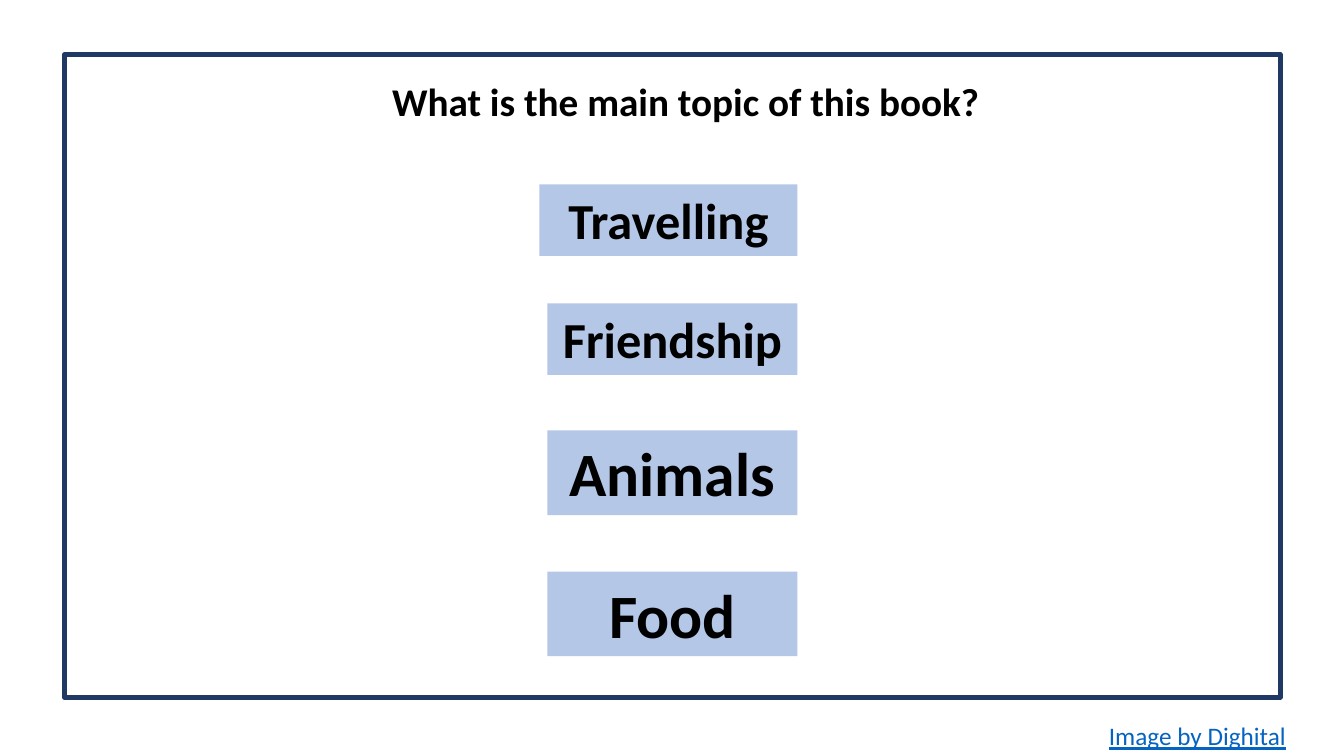
from pptx import Presentation
from pptx.dml.color import RGBColor
from pptx.enum.shapes import MSO_SHAPE
from pptx.enum.text import MSO_ANCHOR, PP_ALIGN
from pptx.util import Inches, Pt

NAVY, PALE_BLUE, LINK_BLUE = "203864", "B4C7E7", "0563C1"
BLACK, WHITE = "000000", "FFFFFF"

# Answer, left, top, width, height, text size
ANSWERS = [
    ("Travelling", 5.35, 1.83, 2.56, 0.71, 36),
    ("Friendship", 5.43, 3.01, 2.48, 0.71, 36),
    ("Animals", 5.43, 4.27, 2.48, 0.84, 44),
    ("Food", 5.43, 5.67, 2.48, 0.84, 44),
]


def color(value):
    return RGBColor.from_string(value)


def write_text(shape, text, text_color=BLACK, wrap=True,
               alignment=PP_ALIGN.CENTER, **font_format):
    shape.text_frame.word_wrap = wrap
    paragraph = shape.text_frame.paragraphs[0]
    paragraph.text = text
    paragraph.alignment = alignment
    font = paragraph.runs[0].font
    font.color.rgb = color(text_color)
    for name, value in {"name": "Calibri", **font_format}.items():
        setattr(font, name, value)
    return paragraph


def add_rectangle(slide, box, fill, line=None, line_width=0):
    shape = slide.shapes.add_shape(MSO_SHAPE.RECTANGLE, *map(Inches, box))
    shape.shadow.inherit = False
    shape.fill.solid()
    shape.fill.fore_color.rgb = color(fill)
    if line:
        shape.line.color.rgb = color(line)
        shape.line.width = Pt(line_width)
    else:
        shape.line.fill.background()
    return shape


def add_text(slide, box, text, **text_format):
    text_box = slide.shapes.add_textbox(*map(Inches, box))
    return write_text(text_box, text, **text_format)


def add_answer(slide, text, left, top, width, height, size):
    shape = add_rectangle(slide, (left, top, width, height), PALE_BLUE)
    shape.text_frame.vertical_anchor = MSO_ANCHOR.TOP
    write_text(shape, text, size=Pt(size), bold=True)


def main():
    presentation = Presentation()
    presentation.slide_width = Inches(13.33)
    presentation.slide_height = Inches(7.5)
    slide = presentation.slides.add_slide(presentation.slide_layouts[6])

    add_rectangle(slide, (0.64, 0.54, 12.06, 6.38), WHITE, NAVY, 3)
    add_text(slide, (10.9, 7.1, 1.98, 0.4), "Image by Dighital",
             text_color=LINK_BLUE, wrap=False, alignment=PP_ALIGN.LEFT,
             size=Pt(18), underline=True)
    question = add_text(slide, (1.8, 0.77, 10, 0.65),
                        "What is the main topic of this book?",
                        size=Pt(28), bold=True)
    question.line_spacing = 0.9
    for answer in ANSWERS:
        add_answer(slide, *answer)

    presentation.save("out.pptx")


if __name__ == "__main__":
    main()
